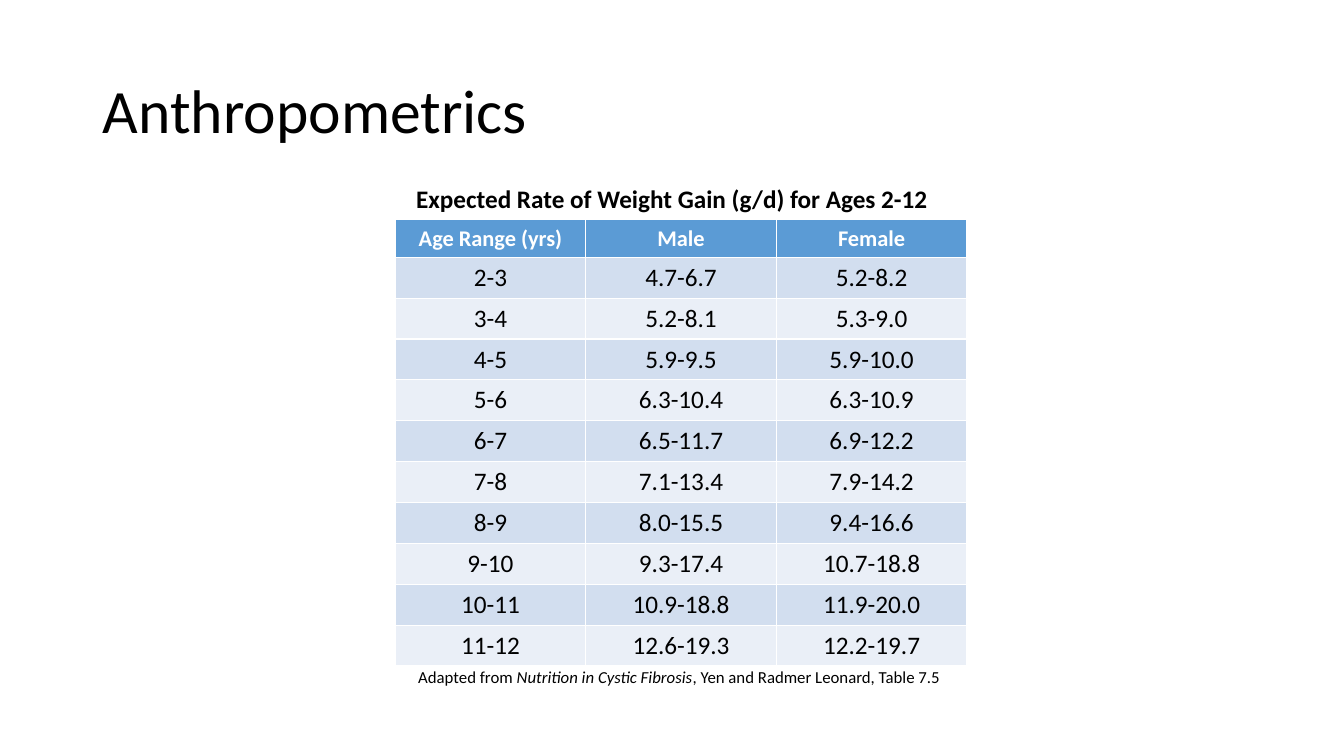
"""Builds the Anthropometrics slide with its table of expected weight gain."""
from pptx import Presentation
from pptx.dml.color import RGBColor
from pptx.enum.text import MSO_ANCHOR as Anchor, PP_ALIGN as Align
from pptx.util import Inches, Pt

COLORS = {"text": "000000", "header text": "FFFFFF", "header": "5B9BD5",
          "odd row": "D2DEEF", "even row": "EAEFF7"}
TABLE_LEFT, TABLE_TOP = 3.92, 2.18
COLUMN_WIDTH, HEADER_HEIGHT, ROW_HEIGHT = 1.89, 0.37, 0.4
WEIGHT_GAIN = [
    ("Age Range (yrs)", "Male", "Female"),
    ("2-3", "4.7-6.7", "5.2-8.2"),
    ("3-4", "5.2-8.1", "5.3-9.0"),
    ("4-5", "5.9-9.5", "5.9-10.0"),
    ("5-6", "6.3-10.4", "6.3-10.9"),
    ("6-7", "6.5-11.7", "6.9-12.2"),
    ("7-8", "7.1-13.4", "7.9-14.2"),
    ("8-9", "8.0-15.5", "9.4-16.6"),
    ("9-10", "9.3-17.4", "10.7-18.8"),
    ("10-11", "10.9-18.8", "11.9-20.0"),
    ("11-12", "12.6-19.3", "12.2-19.7"),
]


def add_span(para, text, size=18, color="text", bold=False, italic=False, align=Align.CENTER):
    """Append formatted text to a paragraph and align the paragraph."""
    para.alignment = align
    span = para.add_run()
    span.text = text
    font = span.font
    font.name, font.size, font.bold, font.italic = "Calibri", Pt(size), bold, italic
    font.color.rgb = RGBColor.from_string(COLORS[color])


deck = Presentation()
deck.slide_width, deck.slide_height = Inches(13.33), Inches(7.5)
page = deck.slides.add_slide(deck.slide_layouts[5])

title = page.shapes.title
title.left, title.top = Inches(0.92), Inches(0.4)
title.width, title.height = Inches(11.5), Inches(1.45)
title.text_frame.vertical_anchor = Anchor.MIDDLE
title_para = title.text_frame.paragraphs[0]
title_para.line_spacing = 0.9
add_span(title_para, "Anthropometrics", size=44, align=Align.LEFT)

row_count, column_count = len(WEIGHT_GAIN), len(WEIGHT_GAIN[0])
table_width = column_count * COLUMN_WIDTH
table_height = HEADER_HEIGHT + (row_count - 1) * ROW_HEIGHT
table = page.shapes.add_table(row_count, column_count, Inches(TABLE_LEFT), Inches(TABLE_TOP),
                              Inches(table_width), Inches(table_height)).table
for column in table.columns:
    column.width = Inches(COLUMN_WIDTH)
for row_index, values in enumerate(WEIGHT_GAIN):
    is_header = row_index == 0
    fill = "header" if is_header else "odd row" if row_index % 2 else "even row"
    table.rows[row_index].height = Inches(HEADER_HEIGHT if is_header else ROW_HEIGHT)
    for column_index, value in enumerate(values):
        cell = table.cell(row_index, column_index)
        cell.fill.solid()
        cell.fill.fore_color.rgb = RGBColor.from_string(COLORS[fill])
        add_span(cell.text_frame.paragraphs[0], value, size=16 if is_header else 18,
                 color="header text" if is_header else "text", bold=is_header)

captions = [
    (3.83, 1.77, 0.4, [("Expected Rate of Weight Gain (g/d) for Ages 2-12", {"bold": True})]),
    (TABLE_LEFT, 6.57, 0.3, [("Adapted from", {"size": 12}),
                             (" Nutrition in Cystic Fibrosis", {"size": 12, "italic": True}),
                             (", Yen and Radmer Leonard, Table 7.5 ", {"size": 12})]),
]
for left, top, height, spans in captions:
    box = page.shapes.add_textbox(Inches(left), Inches(top), Inches(table_width), Inches(height))
    box.text_frame.word_wrap = True
    for text, style in spans:
        add_span(box.text_frame.paragraphs[0], text, **style)

deck.save("out.pptx")
